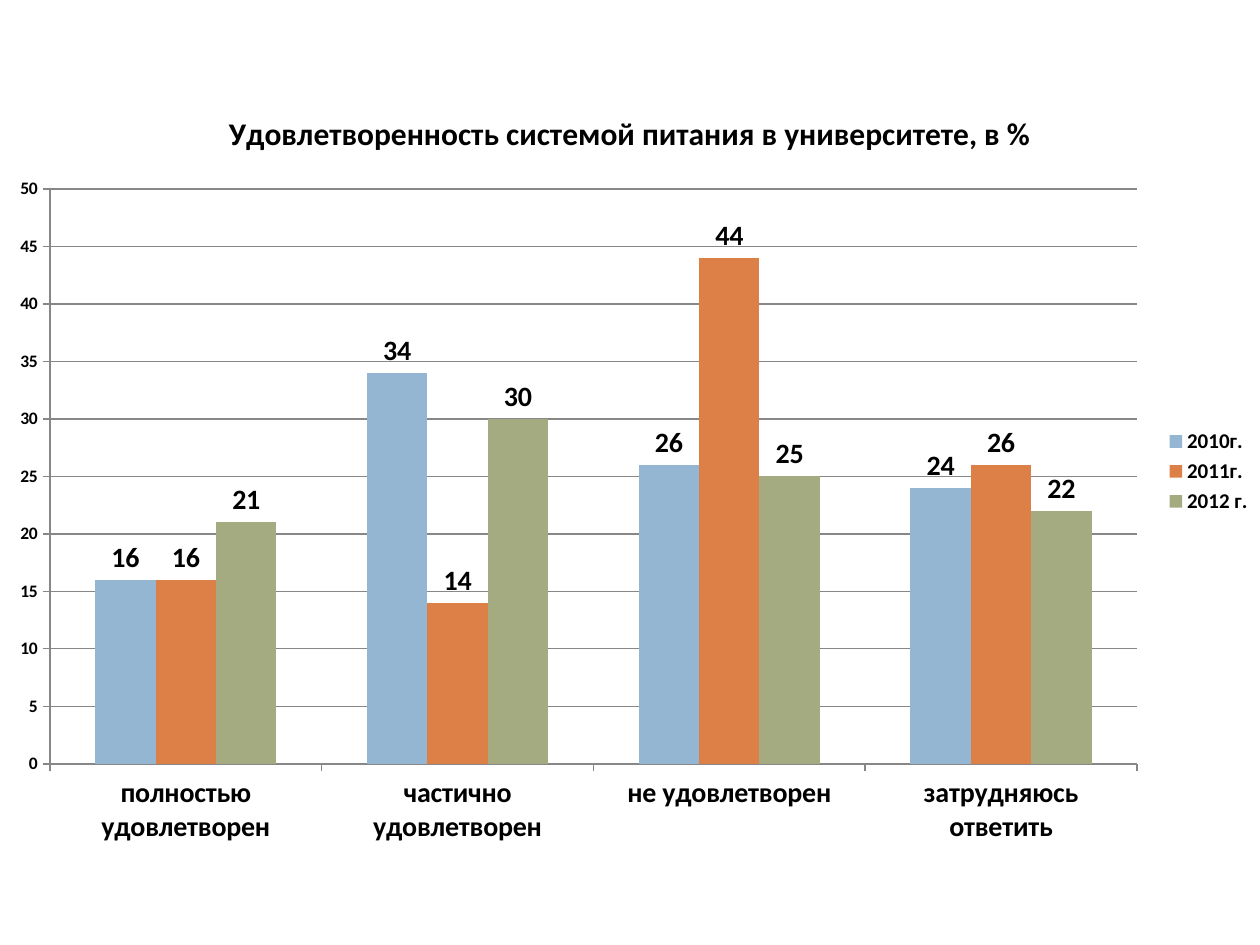
from lxml import etree
from pptx import Presentation
from pptx import util as u
from pptx.chart.data import CategoryChartData
from pptx.dml.color import RGBColor
from pptx.enum import chart as charts
from pptx.oxml import ns

PX = 914400 // 126
COLORS = {"text": "000000", "line": "878787", "2010г.": "94B6D2",
          "2011г.": "DD8047", "2012 г.": "A5AB81"}
CATEGORIES = ["полностью удовлетворен", "частично удовлетворен",
              "не удовлетворен", "затрудняюсь ответить"]
VALUES = {"2010г.": [16, 34, 26, 24], "2011г.": [16, 14, 44, 26],
          "2012 г.": [21, 30, 25, 22]}


def format_font(font, size=10, bold=True, color="text"):
    font.name = "Calibri"
    font.size = u.Pt(size)
    font.bold = bold
    font.color.rgb = RGBColor.from_string(COLORS[color])


def write_text(frame, content, **style):
    paragraph = frame.paragraphs[0]
    run = paragraph.add_run()
    run.text = content
    format_font(run.font, **style)


presentation = Presentation()
presentation.slide_width = 1260 * PX
presentation.slide_height = 945 * PX
slide = presentation.slides.add_slide(presentation.slide_layouts[6])

data = CategoryChartData()
data.categories = CATEGORIES
for name, values in VALUES.items():
    data.add_series(name, values)

left, top, width, height = -5, 84, 1270, 775
chart = slide.shapes.add_chart(
    charts.XL_CHART_TYPE.COLUMN_CLUSTERED,
    left * PX, top * PX, width * PX, height * PX, data).chart
format_font(chart.font, bold=False)
chart.has_title = True
write_text(chart.chart_title.text_frame,
           "Удовлетворенность системой питания в университете, в %", size=18)
chart.chart_title.include_in_layout = False

chart.has_legend = True
chart.legend.position = charts.XL_LEGEND_POSITION.RIGHT
chart.legend.include_in_layout = False
format_font(chart.legend.font, size=12)

plot = chart.plots[0]
plot.gap_width = 150
plot.overlap = 0
plot.vary_by_categories = False
for series in plot.series:
    series.format.fill.solid()
    series.format.fill.fore_color.rgb = RGBColor.from_string(COLORS[series.name])
    series.invert_if_negative = False
    labels = series.data_labels
    labels.show_value = True
    labels.position = charts.XL_LABEL_POSITION.OUTSIDE_END
    format_font(labels.font, size=16)

value_axis = chart.value_axis
value_axis.minimum_scale = 0
value_axis.maximum_scale = 50
value_axis.major_unit = 5
value_axis.has_major_gridlines = True
for axis, size in ((chart.category_axis, 16), (value_axis, 10)):
    axis.major_tick_mark = charts.XL_TICK_MARK.OUTSIDE
    format_font(axis.tick_labels.font, size=size)
for part in (chart.category_axis, value_axis, value_axis.major_gridlines):
    part.format.line.color.rgb = RGBColor.from_string(COLORS["line"])
    part.format.line.width = u.Pt(0.75)

plot_area = chart.element.find(".//" + ns.qn("c:plotArea"))
for old_layout in plot_area.findall(ns.qn("c:layout")):
    plot_area.remove(old_layout)
layout = etree.Element(ns.qn("c:layout"))
plot_area.insert(0, layout)
manual = etree.SubElement(layout, ns.qn("c:manualLayout"))
for tag, value in (("layoutTarget", "inner"), ("xMode", "edge"), ("yMode", "edge"),
                   ("x", (50 - left) / width), ("y", (189 - top) / height),
                   ("w", 1087 / width), ("h", 575 / height)):
    etree.SubElement(manual, ns.qn("c:" + tag), val=str(value))

presentation.save("out.pptx")
